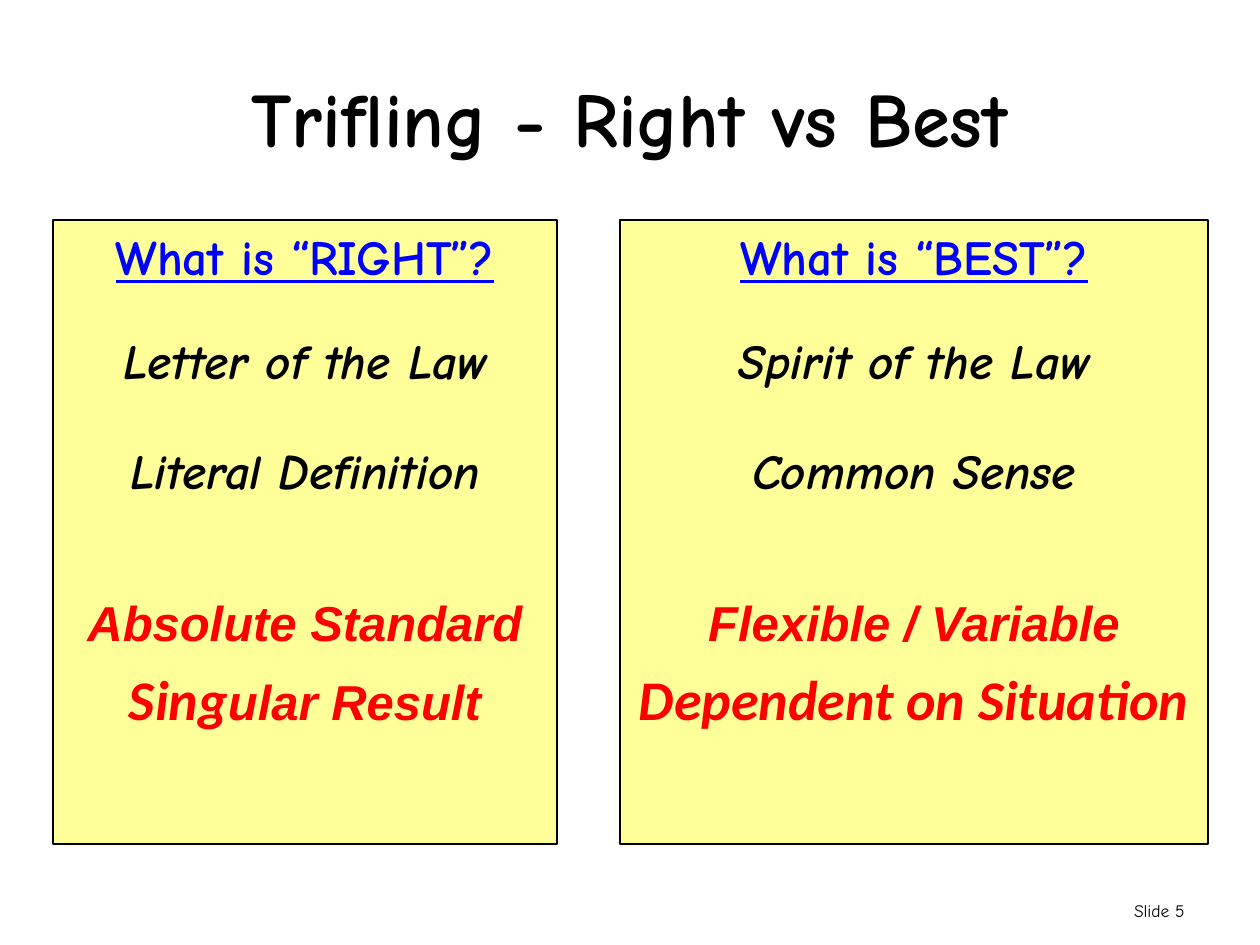
from pptx import Presentation
from pptx import util as u
from pptx.dml.color import RGBColor
from pptx.enum import shapes, text

PX_PER_INCH = 126
BLACK, BLUE, RED, YELLOW = "000000", "0000FF", "FF0000", "FFFF99"
COMIC, ARIAL, CALIBRI = "Comic Neue", "Arial", "Calibri"

# Content: each line is a list of (words, style) runs
TITLE = "Trifling - Right vs Best"
PAGE_LABEL = "Slide 5"
STYLES = {
    "question": dict(font=COMIC, size=28, color=BLUE, bold=True, underline=True),
    "trait": dict(font=COMIC, size=28, color=BLACK, bold=True, italic=True),
    "verdict": dict(font=ARIAL, size=28, color=RED, bold=True, italic=True),
    "outcome": dict(font=CALIBRI, size=32, color=RED, bold=True, italic=True),
}
LINE_GAPS = [0, 26, 29, 53.5, 7.5]  # points before each line
PANELS = [
    (53, 504, [
        [("What is “RIGHT”?", "question")],
        [("Letter of the Law", "trait")],
        [("Literal Definition", "trait")],
        [("Absolute Standard", "verdict")],
        [("Sing", "outcome"), ("ular Result", "verdict")],
    ]),
    (620, 588, [
        [("What is “BEST”?", "question")],
        [("Spirit of the Law", "trait")],
        [("Common Sense", "trait")],
        [("Flexible / Variable", "verdict")],
        [("Dependent on Situation", "outcome")],
    ]),
]
PANEL_TOP, PANEL_HEIGHT = 220, 624


def px(n):
    return u.Emu(round(n * 914400 / PX_PER_INCH))


def rgb(value):
    return RGBColor.from_string(value)


def style_run(run, font, size, color, bold=False, italic=False, underline=False):
    run.font.name = font
    run.font.size = u.Pt(size)
    run.font.color.rgb = rgb(color)
    run.font.bold = bold
    run.font.italic = italic
    run.font.underline = underline


def add_label(slide, words, box, align, anchor, **style):
    frame = slide.shapes.add_textbox(*map(px, box)).text_frame
    frame.word_wrap = True
    frame.vertical_anchor = anchor
    frame.text = words
    line = frame.paragraphs[0]
    line.alignment = align
    style_run(line.runs[0], **style)
    return frame


def add_panel(slide, left, width, lines):
    panel = slide.shapes.add_shape(
        shapes.MSO_SHAPE.RECTANGLE,
        *map(px, (left, PANEL_TOP, width, PANEL_HEIGHT)))
    panel.shadow.inherit = False
    panel.fill.solid()
    panel.fill.fore_color.rgb = rgb(YELLOW)
    panel.line.color.rgb = rgb(BLACK)
    panel.line.width = u.Pt(0.75)
    frame = panel.text_frame
    frame.word_wrap = True
    frame.vertical_anchor = text.MSO_ANCHOR.TOP
    for i, (gap, runs) in enumerate(zip(LINE_GAPS, lines)):
        line = frame.add_paragraph() if i else frame.paragraphs[0]
        line.alignment = text.PP_ALIGN.CENTER
        if gap:
            line.space_before = u.Pt(gap)
        for words, style in runs:
            run = line.add_run()
            run.text = words
            style_run(run, **STYLES[style])


def main():
    deck = Presentation()
    deck.slide_width, deck.slide_height = px(1260), px(945)
    slide = deck.slides.add_slide(deck.slide_layouts[6])

    # Title
    add_label(slide, TITLE, (63, 38, 1134, 158), text.PP_ALIGN.CENTER,
              text.MSO_ANCHOR.MIDDLE, font=COMIC, size=44, color=BLACK, bold=True)

    # Two panels side by side
    for left, width, lines in PANELS:
        add_panel(slide, left, width, lines)

    # Slide number
    label = add_label(slide, PAGE_LABEL, (903, 876, 294, 50), text.PP_ALIGN.RIGHT,
                      text.MSO_ANCHOR.BOTTOM, font=COMIC, size=10, color=BLACK)
    label.margin_bottom = px(5)

    deck.save("out.pptx")


if __name__ == "__main__":
    main()
